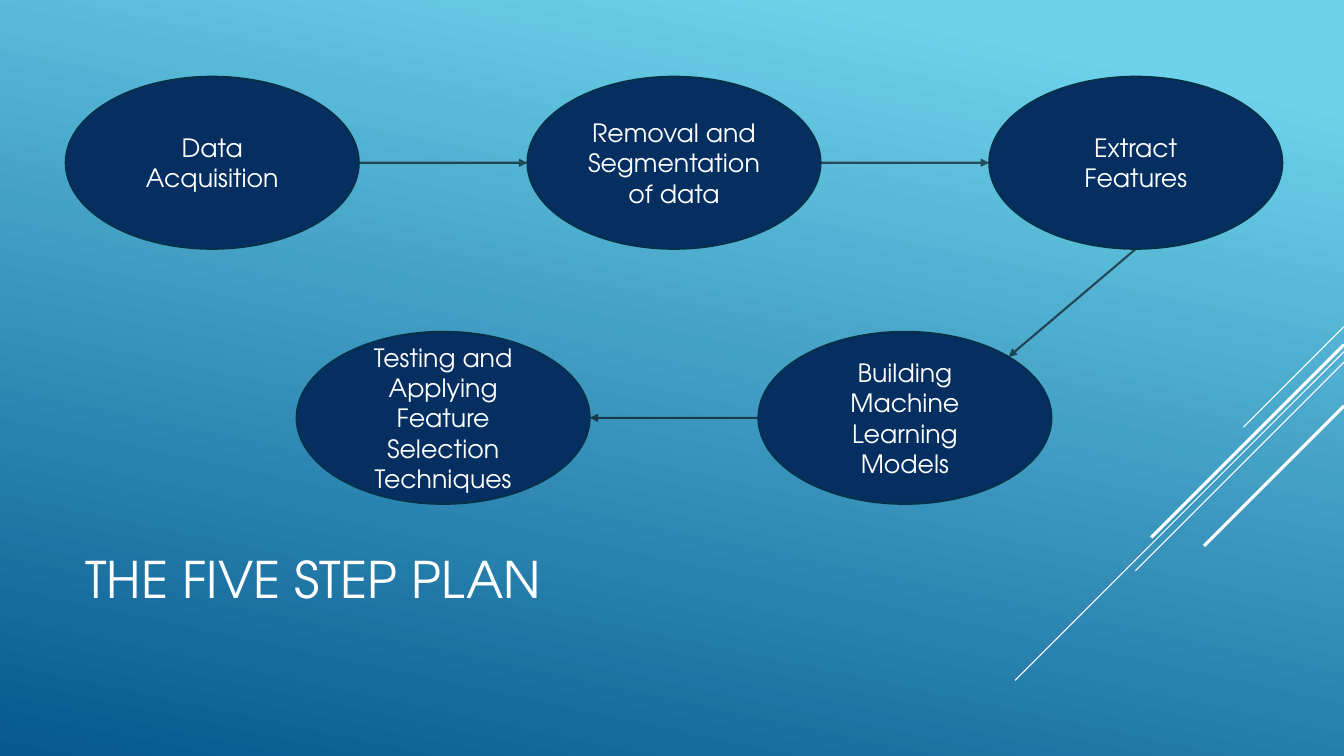
from math import sqrt

from lxml.etree import SubElement
from pptx import Presentation
from pptx.dml.color import RGBColor
from pptx.enum.shapes import MSO_CONNECTOR, MSO_SHAPE
from pptx.enum.text import MSO_ANCHOR, PP_ALIGN
from pptx.oxml.ns import qn
from pptx.util import Inches, Pt

WHITE = RGBColor(0xFF, 0xFF, 0xFF)
BLACK = RGBColor(0x00, 0x00, 0x00)
NAVY = RGBColor(0x05, 0x2F, 0x61)
OUTLINE = RGBColor(0x04, 0x31, 0x48)
SKY = RGBColor(0x6E, 0xD2, 0xEB)
OCEAN = RGBColor(0x06, 0x58, 0x8E)

WIDTH, HEIGHT = 13.33, 7.5

# Grid of the steps: neighbours in a row are two columns apart
LEFT, TOP = 0.65, 0.76
COLUMN, ROW = 2.29, 2.53
STEP_WIDTH, STEP_HEIGHT = 2.91, 1.71

# Points on an ellipse, as shares of its width and height
DIAGONAL = sqrt(0.5) / 2
WEST, EAST, SOUTH = (0, 0.5), (1, 0.5), (0.5, 1)
NORTH_EAST = (0.5 + DIAGONAL, 0.5 - DIAGONAL)

# Text, column, row
STEPS = [
    ("Data Acquisition", 0, 0),
    ("Removal and Segmentation of data", 2, 0),
    ("Extract Features", 4, 0),
    ("Building Machine Learning Models", 3, 1),
    ("Testing and Applying Feature Selection Techniques", 1, 1),
]
# Where each arrow leaves its step and meets the next one
ARROW_ENDS = [(EAST, WEST), (EAST, WEST), (SOUTH, NORTH_EAST), (WEST, EAST)]

# Start on the right edge, run (both in percent of the height), weight
STRIPES = [
    (43.2, 13.3, 0.75),
    (46.5, 43.5, 0.75),
    (47.9, 27.6, 0.75),
    (45.6, 25.5, 2.25),
    (53.7, 18.5, 2.25),
]


class PlanSlide:
    font = "TeX Gyre Adventor"

    def __init__(self, deck):
        self.page = deck.slides.add_slide(deck.slide_layouts[5])

    def background(self):
        fill = self.page.background.fill
        fill.gradient()
        fill.gradient_angle = 258
        for stop, color, position in zip(fill.gradient_stops, (SKY, OCEAN), (0.1, 1)):
            stop.color.rgb = color
            stop.position = position

    def set_text(self, box, text, size, alignment):
        frame = box.text_frame
        frame.text = text
        frame.word_wrap = True
        frame.vertical_anchor = MSO_ANCHOR.MIDDLE
        para = frame.paragraphs[0]
        para.alignment = alignment
        for span in para.runs:
            span.font.name = self.font
            span.font.size = Pt(size)
            span.font.color.rgb = WHITE

    def title(self, text, left, top, width, height):
        box = self.page.shapes.title
        box.left, box.width = Inches(left * WIDTH), Inches(width * WIDTH)
        box.top, box.height = Inches(top * HEIGHT), Inches(height * HEIGHT)
        self.set_text(box, text, 36, PP_ALIGN.LEFT)

    def line(self, start, end, color, weight):
        points = [Inches(value) for value in (*start, *end)]
        connector = self.page.shapes.add_connector(MSO_CONNECTOR.STRAIGHT, *points)
        connector.line.color.rgb = color
        connector.line.width = Pt(weight)
        SubElement(connector.element.spPr, qn("a:effectLst"))
        return connector

    def arrow(self, start, end):
        connector = self.line(start, end, BLACK, 1.5)
        outline = connector.get_or_add_ln()
        color = outline.find(qn("a:solidFill"))[0]
        SubElement(color, qn("a:alpha"), val="60000")
        SubElement(outline, qn("a:tailEnd"), type="triangle")

    def step(self, text, column, row):
        corner = step_point(column, row, (0, 0))
        lengths = [Inches(value) for value in (*corner, STEP_WIDTH, STEP_HEIGHT)]
        ellipse = self.page.shapes.add_shape(MSO_SHAPE.OVAL, *lengths)
        ellipse.shadow.inherit = False
        ellipse.fill.solid()
        ellipse.fill.fore_color.rgb = NAVY
        ellipse.line.color.rgb = OUTLINE
        ellipse.line.width = Pt(1.25)
        self.set_text(ellipse, text, 18, PP_ALIGN.CENTER)


def step_point(column, row, share):
    return (LEFT + column * COLUMN + share[0] * STEP_WIDTH,
            TOP + row * ROW + share[1] * STEP_HEIGHT)


def main():
    deck = Presentation()
    deck.slide_width, deck.slide_height = Inches(WIDTH), Inches(HEIGHT)
    plan = PlanSlide(deck)
    plan.background()

    # Diagonal stripes at the right edge
    for start, run, weight in STRIPES:
        top, length = start * HEIGHT / 100, run * HEIGHT / 100
        plan.line((WIDTH, top), (WIDTH - length, top + length), WHITE, weight)

    plan.title("THE FIVE STEP PLAN", 0.056, 0.655, 0.7, 0.22)

    # Arrows lie behind the steps
    for (_, *here), (_, *there), (leave, meet) in zip(STEPS, STEPS[1:], ARROW_ENDS):
        plan.arrow(step_point(*here, leave), step_point(*there, meet))
    for step in STEPS:
        plan.step(*step)

    deck.save("out.pptx")


if __name__ == "__main__":
    main()
